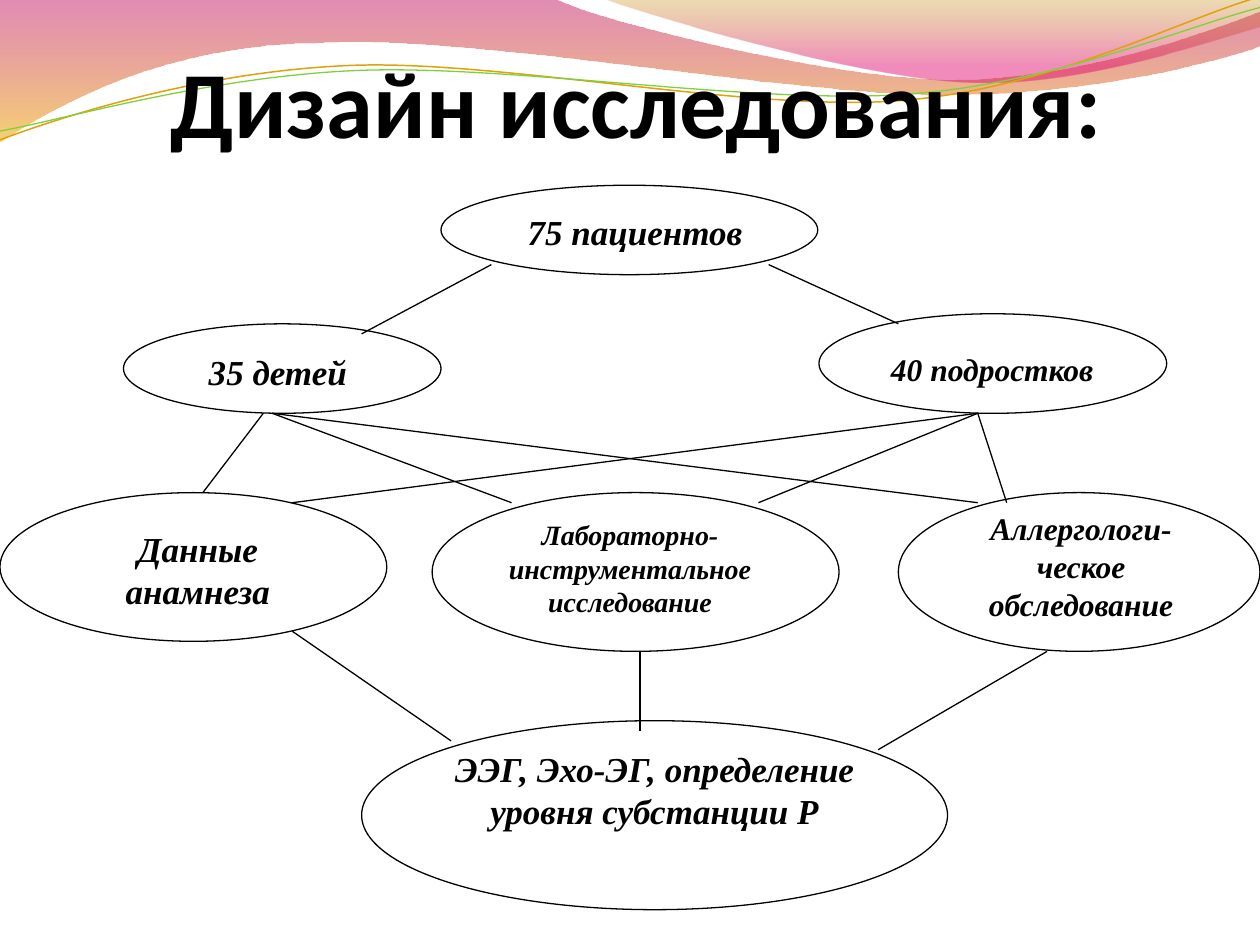
from math import cos, radians, sin

from lxml import etree
from pptx import Presentation
from pptx.dml.color import RGBColor
from pptx.enum.shapes import MSO_CONNECTOR, MSO_SHAPE
from pptx.enum.text import MSO_ANCHOR, MSO_AUTO_SIZE, PP_ALIGN
from pptx.oxml import parse_xml
from pptx.oxml.ns import nsdecls, qn
from pptx.util import Inches, Pt

ELLIPSE = MSO_SHAPE.OVAL
STRAIGHT = MSO_CONNECTOR.STRAIGHT
CENTER = PP_ALIGN.CENTER
BOTTOM = MSO_ANCHOR.BOTTOM
GROW, FIXED = MSO_AUTO_SIZE.SHAPE_TO_FIT_TEXT, MSO_AUTO_SIZE.NONE
BLACK, WHITE = "000000", "FFFFFF"
WAVE_TILT = 2.7  # degrees, counterclockwise

# A path is a list of segments: one point is a line, three are a Bezier curve.
# Gradient stops: position %, colour, opacity %.
BANDS = [
    ([[(0, -0.01)], [(4.4, -0.01)],
      [(4.76, 0.17), (6.64, 0.63), (7.58, 0.63)],
      [(8.53, 0.63), (9.58, 0.26), (10, 0.09)],
      [(10.01, 0.36)],
      [(9.83, 0.44), (8.7, 0.76), (7.46, 0.75)],
      [(6.22, 0.75), (3.82, 0.28), (2.57, 0.34)],
      [(1.29, 0.35), (0.46, 0.83), (-0.01, 1.13)],
      [(0, -0.01)]],
     [(0, "BD0059", 45), (100, "F0AB00", 55)]),
    ([[(4.79, -0.01)],
      [(5.09, 0.11), (6.82, 0.62), (7.69, 0.65)],
      [(8.56, 0.69), (9.61, 0.32), (10, 0.21)],
      [(10, 0)], [(4.79, -0.01)]],
     [(0, "C38B00", 30), (80, "E1006B", 45)]),
]
# Path as it appears after the tilt, centre of the tilt, colour, width
WAVES = [
    ([[(0, 1.11)],
      [(0.48, 0.93), (1.58, 0.57), (2.77, 0.52)],
      [(3.95, 0.47), (5.93, 0.89), (7.13, 0.8)],
      [(8.33, 0.71), (9.38, 0.15), (9.98, -0.02)]], (4.99, 0.57), "E0A209", 0.85),
    ([[(0, 1.04)],
      [(0.47, 0.96), (1.64, 0.61), (2.83, 0.56)],
      [(4.03, 0.51), (5.97, 0.83), (7.17, 0.75)],
      [(8.36, 0.67), (9.41, 0.21), (10, 0.06)]], (5, 0.59), "7FD13B", 0.75),
]
# Ellipse boxes and labels (box, text, size), row by row
ROWS = [
    ([(3.5, 1.47, 2.99, 0.71), (0.98, 2.57, 2.52, 0.71), (6.5, 2.49, 2.76, 0.79)],
     [((3.82, 1.62, 2.44, 0.43), "75 пациентов", 20),
      ((1.3, 2.73, 1.81, 0.43), "35 детей", 20),
      ((6.81, 2.73, 2.13, 0.4), "40 подростков", 18)]),
    ([(0, 3.91, 3.07, 1.18), (3.43, 3.91, 3.23, 1.26), (7.13, 3.91, 2.87, 1.26)],
     [((0.43, 4.14, 2.28, 0.77), "Данные анамнеза", 20),
      ((3.74, 4.06, 2.52, 0.9), "Лабораторно-инструментальное исследование", 16),
      ((7.52, 3.99, 2.12, 1), "Аллергологи-ческое обследование", 18)]),
    ([(2.87, 5.72, 4.65, 1.5)],
     [((3.5, 5.88, 3.39, 1.1), "ЭЭГ, Эхо-ЭГ, определение уровня субстанции Р", 20)]),
]
CHILDREN, TEENS = (2.16, 3.28), (7.76, 3.28)
LINKS = [
    ((3.9, 2.1), (2.87, 2.65)),
    ((6.1, 2.1), (7.13, 2.57)),
    ((2.09, 3.28), (1.61, 3.91)),
    (CHILDREN, (4.06, 3.99)),
    (CHILDREN, (7.76, 3.99)),
    (TEENS, (2.32, 3.99)),
    (TEENS, (6.02, 3.99)),
    (TEENS, (7.99, 3.99)),
    ((2.32, 5.01), (3.58, 5.88)),
    ((5.08, 5.17), (5.08, 5.8)),
    ((8.31, 5.17), (6.97, 5.95)),
]


def rgb(color):
    return RGBColor.from_string(color)


def inches(values):
    return [Inches(v) for v in values]


def set_line(shape, color=BLACK, width=0.75):
    shape.line.color.rgb = rgb(color)
    shape.line.width = Pt(width)


def set_text(tf, text, *, size, font="Times New Roman", italic=True, color=BLACK):
    tf.word_wrap = True
    p = tf.paragraphs[0]
    p.alignment = CENTER
    r = p.add_run()
    r.text = text
    r.font.name, r.font.size = font, Pt(size)
    r.font.bold, r.font.italic = True, italic
    r.font.color.rgb = rgb(color)
    return p


def rotate(point, center, degrees):
    """Turn a point clockwise on the slide."""
    a = radians(degrees)
    dx, dy = point[0] - center[0], point[1] - center[1]
    return center[0] + dx * cos(a) - dy * sin(a), center[1] + dx * sin(a) + dy * cos(a)


def add_freeform(shapes, path, close):
    """Draw the end points as lines, then bend those that have control points."""
    start, *ends = [inches(segment[-1]) for segment in path]
    builder = shapes.build_freeform(*start)
    builder.add_line_segments(ends, close=close)
    sp = builder.convert_to_shape()
    sp.shadow.inherit = False
    lines = list(sp._element.iter(qn("a:lnTo")))
    for line, (*controls, _) in zip(lines, path[1:]):
        if controls:
            line.tag = qn("a:cubicBezTo")
            for i, (x, y) in enumerate(controls):
                pt = etree.Element(qn("a:pt"), x=str(Inches(x) - sp.left),
                                   y=str(Inches(y) - sp.top))
                line.insert(i, pt)
    return sp


def add_band(shapes, path, stops):
    sp = add_freeform(shapes, path, close=True)
    sp.line.fill.background()
    gs = "".join(f'<a:gs pos="{pos * 1000}"><a:srgbClr val="{color}">'
                 f'<a:alpha val="{alpha * 1000}"/></a:srgbClr></a:gs>'
                 for pos, color, alpha in stops)
    fill = parse_xml(f'<a:gradFill {nsdecls("a")} rotWithShape="1"><a:gsLst>{gs}</a:gsLst>'
                     '<a:lin ang="5400000" scaled="0"/></a:gradFill>')
    sp._element.spPr.find(qn("a:custGeom")).addnext(fill)


def add_wave(shapes, path, center, color, width):
    level = [[rotate(point, center, WAVE_TILT) for point in segment] for segment in path]
    sp = add_freeform(shapes, level, close=False)
    sp.rotation = 360 - WAVE_TILT
    sp.fill.background()
    set_line(sp, color, width)


def add_ellipse(shapes, box):
    sp = shapes.add_shape(ELLIPSE, *inches(box))
    sp.shadow.inherit = False
    sp.fill.solid()
    sp.fill.fore_color.rgb = rgb(WHITE)
    set_line(sp)


def add_label(shapes, box, text, size):
    tf = shapes.add_textbox(*inches(box)).text_frame
    p = set_text(tf, text, size=size)
    tf.auto_size = GROW
    before = etree.SubElement(p._p.get_or_add_pPr(), qn("a:spcBef"))
    etree.SubElement(before, qn("a:spcPct"), val="50000")


def add_link(shapes, start, end):
    link = shapes.add_connector(STRAIGHT, *inches(start + end))
    set_line(link)
    etree.SubElement(link._element.spPr, qn("a:effectLst"))


def format_title(shapes):
    title = shapes.title
    title.left, title.top, title.width, title.height = inches((0.55, 0, 9, 1.25))
    tf = title.text_frame
    tf.margin_left, tf.margin_top, tf.margin_right, tf.margin_bottom = inches((0, 0.05, 0, 0))
    tf.vertical_anchor = BOTTOM
    tf.auto_size = FIXED
    set_text(tf, "Дизайн исследования:", size=54, font="Calibri", italic=False)
    shapes._spTree.append(title._element)  # in front of the waves


def main():
    prs = Presentation()
    prs.slide_width, prs.slide_height = Inches(10), Inches(7.5)
    s = prs.slides.add_slide(prs.slide_layouts[5])
    for band in BANDS:
        add_band(s.shapes, *band)
    waves = s.shapes.add_group_shape()
    for wave in WAVES:
        add_wave(waves.shapes, *wave)
    format_title(s.shapes)
    for ellipses, labels in ROWS:
        for box in ellipses:
            add_ellipse(s.shapes, box)
        for label in labels:
            add_label(s.shapes, *label)
    for link in LINKS:
        add_link(s.shapes, *link)
    prs.save("out.pptx")


if __name__ == "__main__":
    main()
